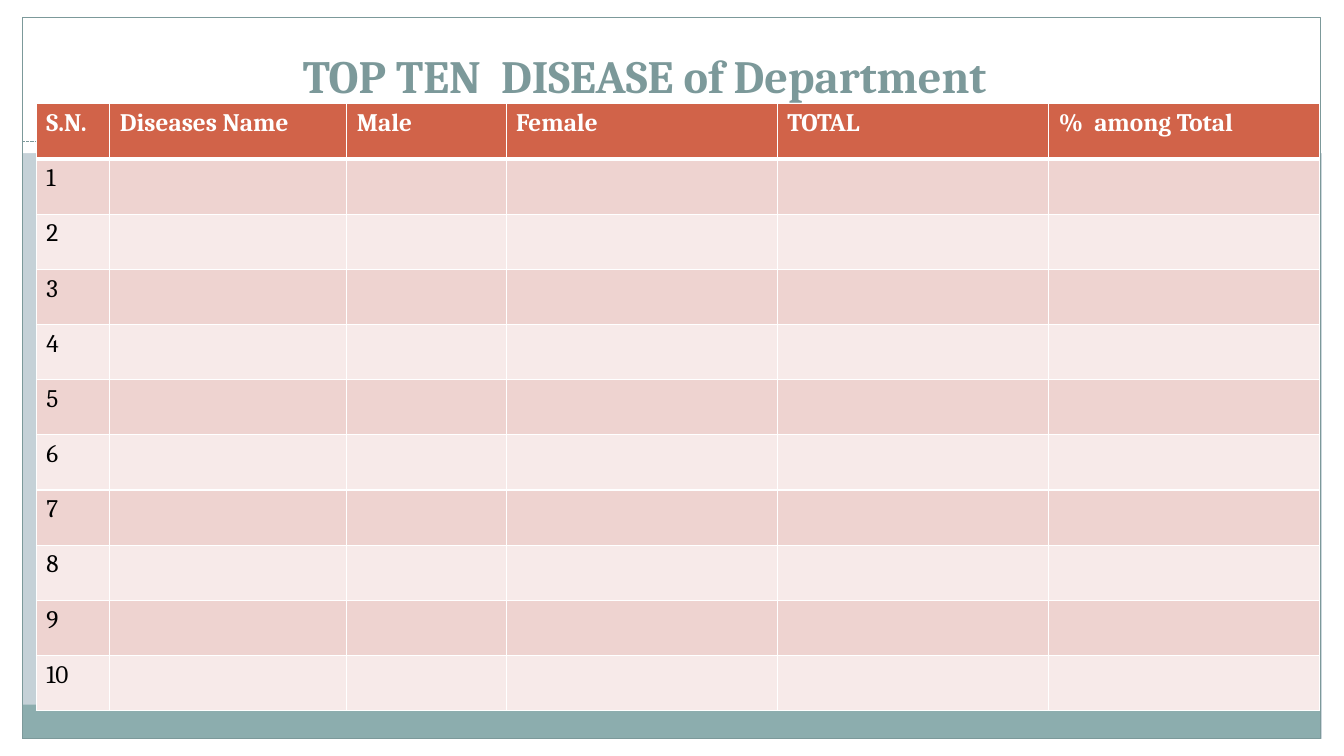
from dataclasses import dataclass

from lxml.etree import SubElement
from pptx import Presentation
from pptx.dml.color import RGBColor
from pptx.enum.dml import MSO_LINE
from pptx.enum.shapes import MSO_CONNECTOR, MSO_SHAPE
from pptx.enum.text import MSO_ANCHOR, PP_ALIGN
from pptx.oxml.ns import qn
from pptx.slide import Slide
from pptx.util import Inches, Pt

FONT = "Cambria"
WHITE, BLACK = "FFFFFF", "000000"
BACKGROUND, TEAL, FOOTER_TEAL = "C5D1D7", "7C999A", "8CADAE"
HEADER_RED, ROW_DARK, ROW_LIGHT = "D16349", "EED3D0", "F7EAE9"


@dataclass
class Panel:
    left: float
    top: float
    width: float
    height: float
    fill: str | None = None
    outline: str | None = None


@dataclass
class Column:
    heading: str
    width: float


PANELS = [
    Panel(0, 7.33, 13.33, 0.17, WHITE),
    Panel(0, 0, 13.33, 1.52, WHITE),
    Panel(0, 0, 0.22, 7.5, WHITE),
    Panel(13.11, 0, 0.22, 7.5, WHITE),
    Panel(0.22, 6.99, 12.88, 0.34, FOOTER_TEAL),
    Panel(0.22, 0.17, 12.88, 7.16, outline=TEAL),
]

COLUMNS = [
    Column("S.N.", 0.73),
    Column("Diseases Name", 2.35),
    Column("Male", 1.58),
    Column("Female", 2.69),
    Column("TOTAL", 2.69),
    Column("%  among Total", 2.69),
]
DISEASE_COUNT = 10


def color(hex_code: str) -> RGBColor:
    return RGBColor.from_string(hex_code)


def style_text(paragraph, size: float, hex_code: str, bold: bool) -> None:
    for run in paragraph.runs:
        run.font.name = FONT
        run.font.size = Pt(size)
        run.font.bold = bold
        run.font.color.rgb = color(hex_code)


def draw_panel(slide: Slide, panel: Panel) -> None:
    rectangle = slide.shapes.add_shape(
        MSO_SHAPE.RECTANGLE, Inches(panel.left), Inches(panel.top),
        Inches(panel.width), Inches(panel.height))
    rectangle.shadow.inherit = False
    if panel.fill:
        rectangle.fill.solid()
        rectangle.fill.fore_color.rgb = color(panel.fill)
    else:
        rectangle.fill.background()
    if panel.outline:
        rectangle.line.color.rgb = color(panel.outline)
        rectangle.line.width = Pt(0.75)
    else:
        rectangle.line.fill.background()


def draw_divider(slide: Slide) -> None:
    divider = slide.shapes.add_connector(
        MSO_CONNECTOR.STRAIGHT, Inches(0.22), Inches(1.4), Inches(13.1), Inches(1.4))
    divider.line.color.rgb = color(TEAL)
    divider.line.width = Pt(0.75)
    divider.line.dash_style = MSO_LINE.SQUARE_DOT
    SubElement(divider.element.spPr, qn("a:effectLst"))


def draw_title(slide: Slide) -> None:
    title = slide.shapes.add_textbox(
        Inches(0.74), Inches(0.3), Inches(11.41), Inches(0.77))
    frame = title.text_frame
    frame.word_wrap = True
    frame.vertical_anchor = MSO_ANCHOR.BOTTOM
    frame.text = "TOP TEN  DISEASE of Department "
    frame.paragraphs[0].alignment = PP_ALIGN.CENTER
    style_text(frame.paragraphs[0], 33, TEAL, True)


def set_borders(cell, top: float, bottom: float) -> None:
    properties = cell._tc.get_or_add_tcPr()
    widths = {"a:lnL": 1, "a:lnR": 1, "a:lnT": top, "a:lnB": bottom}
    for tag, width in widths.items():
        border = SubElement(properties, qn(tag), w=str(Pt(width)))
        SubElement(SubElement(border, qn("a:solidFill")), qn("a:srgbClr"), val=WHITE)


def fill_cell(cell, row: int, text: str) -> None:
    is_header = row == 0
    set_borders(cell, top=3 if row == 1 else 1, bottom=3 if is_header else 1)
    cell.fill.solid()
    row_fill = ROW_DARK if row % 2 else ROW_LIGHT
    cell.fill.fore_color.rgb = color(HEADER_RED if is_header else row_fill)
    if text:
        cell.text_frame.text = text
        style_text(cell.text_frame.paragraphs[0], 18,
                   WHITE if is_header else BLACK, is_header)


def draw_disease_table(slide: Slide) -> None:
    row_count = DISEASE_COUNT + 1
    # The total height is shared equally among the rows
    diseases = slide.shapes.add_table(
        row_count, len(COLUMNS), Inches(0.36), Inches(1.03),
        Inches(12.73), Inches(6.02)).table
    for index, column in enumerate(COLUMNS):
        diseases.columns[index].width = Inches(column.width)
        for row in range(row_count):
            number = str(row) if index == 0 else ""
            fill_cell(diseases.cell(row, index), row, number if row else column.heading)


def main() -> None:
    presentation = Presentation()
    presentation.slide_width = Inches(13.33)
    presentation.slide_height = Inches(7.5)
    slide = presentation.slides.add_slide(presentation.slide_layouts[6])

    # Background and frame
    slide.background.fill.solid()
    slide.background.fill.fore_color.rgb = color(BACKGROUND)
    for panel in PANELS:
        draw_panel(slide, panel)
    draw_divider(slide)

    # Content
    draw_title(slide)
    draw_disease_table(slide)
    presentation.save("out.pptx")


if __name__ == "__main__":
    main()
